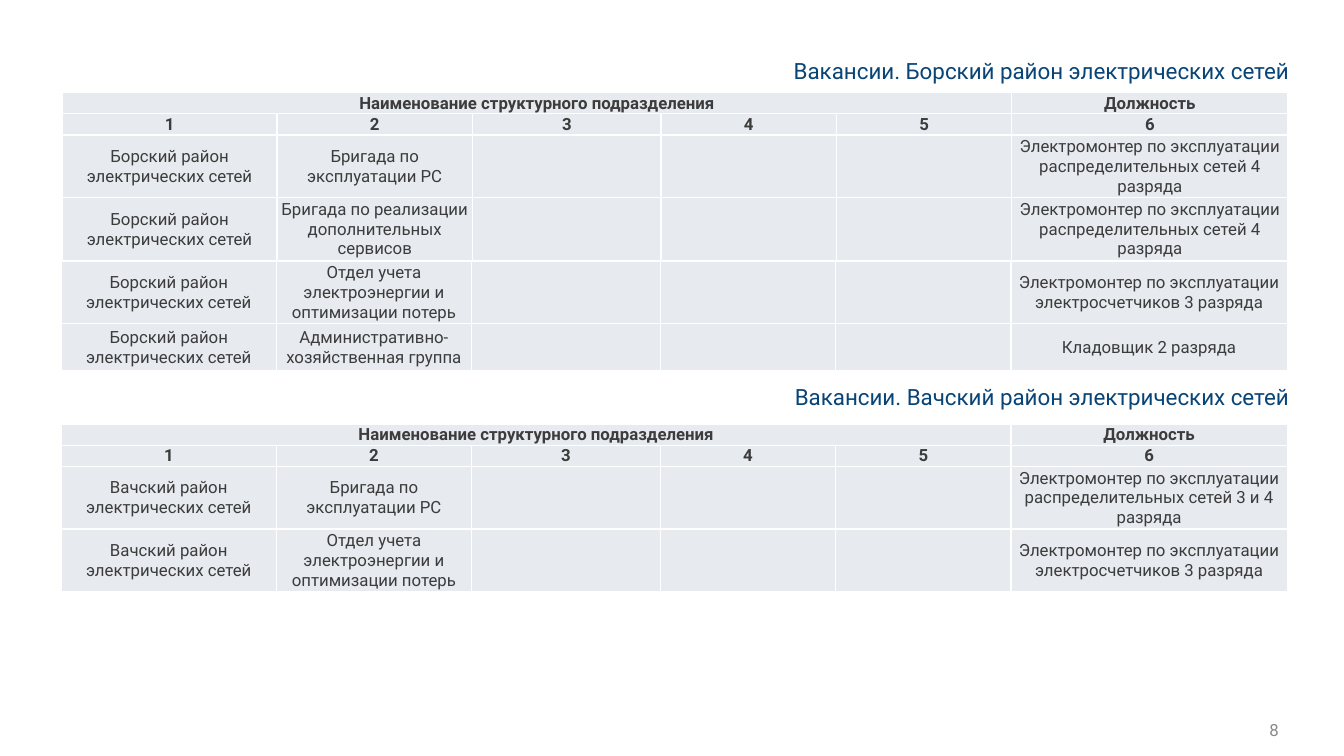
from lxml import etree
from pptx import Presentation
from pptx import util as u
from pptx.dml.color import RGBColor
from pptx.enum import text as t
from pptx.oxml import ns

# Content
BOR = "Борский район электрических сетей"
VACH = "Вачский район электрических сетей"
CREW = "Бригада по эксплуатации РС"
METER = "Отдел учета электроэнергии и оптимизации потерь"
FITTER = "Электромонтер по эксплуатации распределительных сетей {} разряда"
TESTER = "Электромонтер по эксплуатации электросчетчиков 3 разряда"
HEAD = [
    ("Наименование структурного подразделения", "", "", "", "", "Должность"),
    ("1", "2", "3", "4", "5", "6"),
]


def job(area, unit, post):
    return area, unit, "", "", "", post


# Title, top
TITLES = [
    ("Вакансии. Борский район электрических сетей", 1.52),
    ("Вакансии. Вачский район электрических сетей", 9.73),
]
# Left, top, heading rows, body rows, body row heights
TABLES = [
    (1.57, 2.34, HEAD, [
        job(BOR, CREW, FITTER.format("4")),
        job(BOR, "Бригада по реализации дополнительных сервисов",
            FITTER.format("4")),
    ], [1.58, 1.58]),
    (1.55, 6.58, [], [
        job(BOR, METER, TESTER),
        job(BOR, "Административно-хозяйственная группа",
            "Кладовщик 2 разряда"),
    ], [1.58, 1.19]),
    (1.55, 10.69, HEAD, [
        job(VACH, CREW, FITTER.format("3 и 4")),
        job(VACH, METER, TESTER),
    ], [1.58, 1.58]),
]
COLS = [5.41, 4.93, 4.75, 4.42, 4.42, 6.96]
HEAD_H = 0.53
COLORS = {"title": "094476", "text": "3C3C3C", "cell": "E7EAEF",
          "rule": "FFFFFF", "page": "8A8A8A"}

deck = Presentation()
deck.slide_width, deck.slide_height = u.Cm(33.87), u.Cm(19.05)
slide = deck.slides.add_slide(deck.slide_layouts[6])


def style(par, size, color, align, bold=False):
    par.alignment = align
    font = par.font
    font.name, font.size, font.bold = "Roboto", u.Pt(size), bold
    font.color.rgb = RGBColor.from_string(COLORS[color])
    for run in par.runs:
        run.font.name, run.font.size, run.font.bold = "Roboto", u.Pt(size), bold
        run.font.color.rgb = RGBColor.from_string(COLORS[color])


def label(words, left, top, width, height, size, color):
    box = slide.shapes.add_textbox(*map(u.Cm, (left, top, width, height)))
    frame = box.text_frame
    frame.word_wrap = True
    frame.margin_left = frame.margin_right = 0
    frame.margin_top = frame.margin_bottom = 0
    frame.text = words
    style(frame.paragraphs[0], size, color, t.PP_ALIGN.RIGHT)
    return frame


def border(cell):
    props = cell._tc.get_or_add_tcPr()
    for side in ("lnL", "lnR", "lnT", "lnB"):
        line = etree.SubElement(props, ns.qn("a:" + side), w="12700")
        fill = etree.SubElement(line, ns.qn("a:solidFill"))
        etree.SubElement(fill, ns.qn("a:srgbClr"), val=COLORS["rule"])


def dress(cell, words, bold):
    border(cell)
    cell.fill.solid()
    cell.fill.fore_color.rgb = RGBColor.from_string(COLORS["cell"])
    cell.margin_left = cell.margin_right = cell.margin_top = u.Cm(0.02)
    cell.margin_bottom = 0
    cell.vertical_anchor = t.MSO_ANCHOR.MIDDLE
    cell.text = words
    style(cell.text_frame.paragraphs[0], 12, "text", t.PP_ALIGN.CENTER, bold)


def grid(left, top, head, body, sizes):
    rows = head + body
    highs = [HEAD_H] * len(head) + sizes
    table = slide.shapes.add_table(
        len(rows), len(COLS), u.Cm(left), u.Cm(top),
        u.Cm(sum(COLS)), u.Cm(sum(highs))).table
    table.first_row = table.horz_banding = False
    for col, width in zip(table.columns, COLS):
        col.width = u.Cm(width)
    for r, (row, high) in enumerate(zip(rows, highs)):
        table.rows[r].height = u.Cm(high)
        for c, words in enumerate(row):
            dress(table.cell(r, c), words, r < len(head))
    if head:
        table.cell(0, 0).merge(table.cell(0, 4))


# Page number
label("8", 30.78, 18.16, 1.45, 0.46, 12, "page").vertical_anchor = t.MSO_ANCHOR.MIDDLE

# Titles
for words, top in TITLES:
    frame = label(words, 15.34, top, 17.15, 0.61, 16, "title")
    frame.paragraphs[0].line_spacing = 0.9

# Vacancy tables
for part in TABLES:
    grid(*part)

deck.save("out.pptx")
